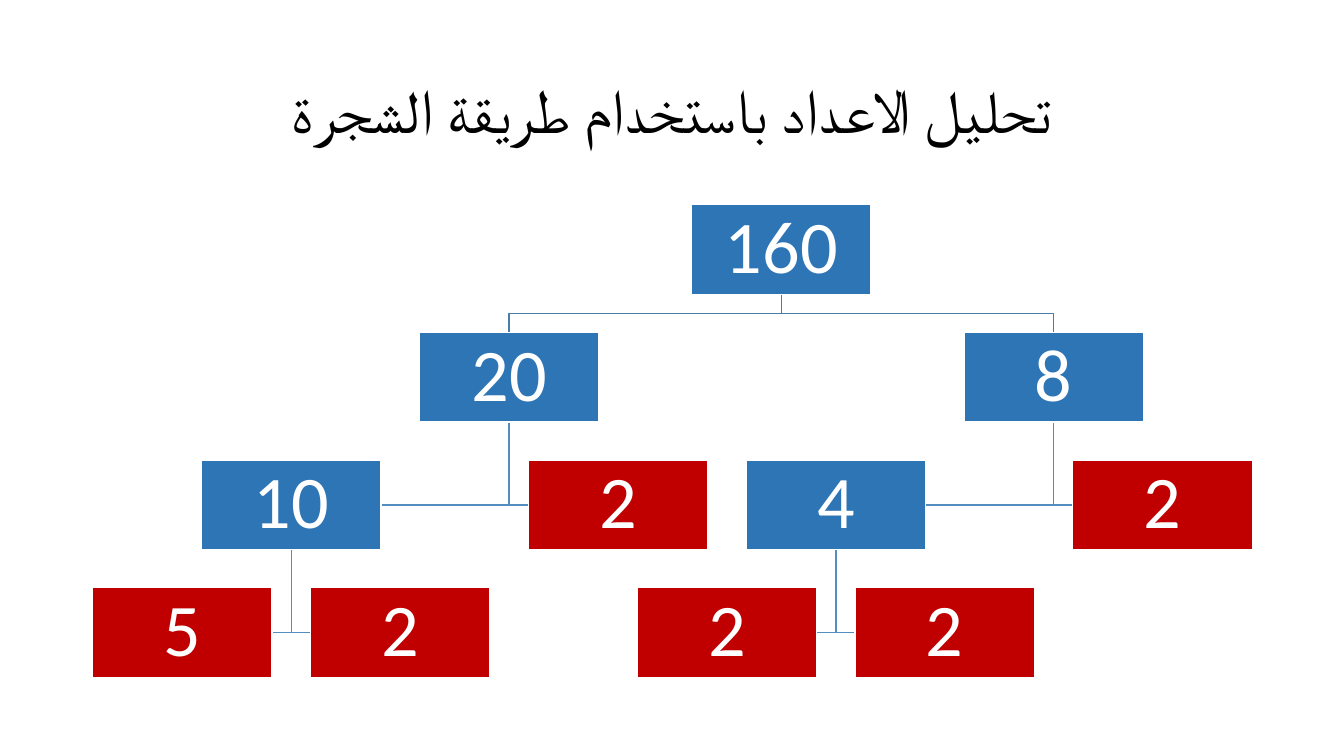
"""Build a slide that factors 160 with a tree."""
import pptx
import pptx.util
import pptx.dml.color
import pptx.enum.shapes
import pptx.enum.text
import pptx.oxml.ns
import lxml.etree

TITLE = "تحليل الاعداد باستخدام طريقة الشجرة"
FONT = "Calibri"
COLORS = {"node": "2E75B6", "prime": "C00000", "white": "FFFFFF",
          "black": "000000", "fork": "497CAB", "hang": "538DC1"}
# name: (number, column, row, parent)
NODES = {
    "root": ("160", 5.5, 0, None),
    "left": ("20", 3, 1, "root"),
    "ten": ("10", 1, 2, "left"),
    "five": ("5", 0, 3, "ten"),
    "ten two": ("2", 2, 3, "ten"),
    "left two": ("2", 4, 2, "left"),
    "right": ("8", 8, 1, "root"),
    "four": ("4", 6, 2, "right"),
    "four one": ("2", 5, 3, "four"),
    "four two": ("2", 7, 3, "four"),
    "right two": ("2", 9, 2, "right"),
}
PRIMES = {"2", "5"}

Inches = pptx.util.Inches
Pt = pptx.util.Pt
LEFT, SPAN = 0.92, 11.5
TOP, LAST = 2.03, 5.83
WIDE, HIGH = 1.78, 0.89
COL = (SPAN - WIDE) / 9
ROW = (LAST - TOP) / 3


def color(key):
    return pptx.dml.color.RGBColor.from_string(COLORS[key])


def place(name):
    col, row = NODES[name][1:3]
    return LEFT + col * COL, TOP + row * ROW


def style(par, size, key):
    par.alignment = pptx.enum.text.PP_ALIGN.CENTER
    par.line_spacing = 0.9
    par.font.name = FONT
    par.font.size = Pt(size)
    par.font.color.rgb = color(key)


def add_title(slide):
    title = slide.shapes.title
    title.left, title.top = Inches(LEFT), Inches(0.4)
    title.width, title.height = Inches(SPAN), Inches(1.45)
    frame = title.text_frame
    frame.text = TITLE
    frame.auto_size = pptx.enum.text.MSO_AUTO_SIZE.NONE
    frame.vertical_anchor = pptx.enum.text.MSO_ANCHOR.MIDDLE
    par = frame.paragraphs[0]
    style(par, 44, "black")
    props = par._p.get_or_add_pPr()
    props.set("rtl", "1")
    script = lxml.etree.SubElement(props.defRPr, pptx.oxml.ns.qn("a:cs"))
    script.set("typeface", FONT)


def add_link(slide, name):
    parent = NODES[name][3]
    px, py = place(parent)
    cx, cy = place(name)
    start = (px + WIDE / 2, py + HIGH)
    if parent == "root":
        bend = (start[1] + cy) / 2
        end = cx + WIDE / 2
        points = [(start[0], bend), (end, bend), (end, cy)]
    else:
        side = cx if cx > px else cx + WIDE
        mid = cy + HIGH / 2
        points = [(start[0], mid), (side, mid)]
    form = slide.shapes.build_freeform(
        Inches(start[0]), Inches(start[1]))
    form.add_line_segments(
        [(Inches(x), Inches(y)) for x, y in points], close=False)
    link = form.convert_to_shape()
    link.shadow.inherit = False
    link.fill.background()
    link.line.color.rgb = color("fork" if parent == "root" else "hang")
    link.line.width = Pt(1)


def add_node(slide, name):
    number = NODES[name][0]
    x, y = place(name)
    box = slide.shapes.add_shape(
        pptx.enum.shapes.MSO_SHAPE.RECTANGLE,
        Inches(x), Inches(y), Inches(WIDE), Inches(HIGH))
    box.shadow.inherit = False
    box.fill.solid()
    box.fill.fore_color.rgb = color("prime" if number in PRIMES else "node")
    box.line.color.rgb = color("white")
    box.line.width = Pt(1)
    frame = box.text_frame
    frame.margin_left = frame.margin_right = Inches(0.04)
    frame.margin_top = frame.margin_bottom = Inches(0.04)
    frame.vertical_anchor = pptx.enum.text.MSO_ANCHOR.MIDDLE
    frame.text = number
    style(frame.paragraphs[0], 53, "white")


def main():
    deck = pptx.Presentation()
    deck.slide_width, deck.slide_height = Inches(13.33), Inches(7.5)
    slide = deck.slides.add_slide(deck.slide_layouts[5])
    add_title(slide)
    for name in NODES:
        if name != "root":
            add_link(slide, name)
    for name in NODES:
        add_node(slide, name)
    deck.save("out.pptx")


if __name__ == "__main__":
    main()
